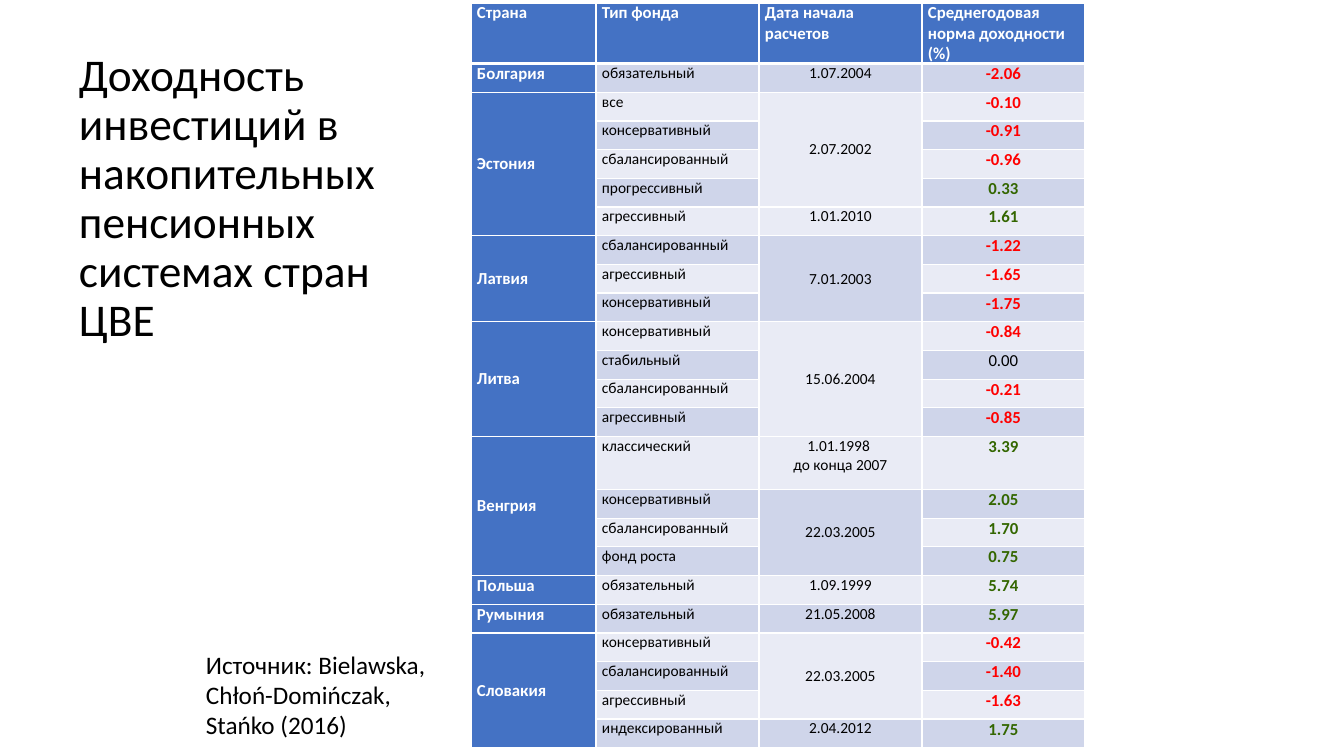
from copy import deepcopy

from lxml.etree import SubElement
from pptx import Presentation
from pptx.dml.color import RGBColor
from pptx.enum.text import MSO_ANCHOR as Anchor, MSO_AUTO_SIZE as AutoSize, PP_ALIGN as Align
from pptx.oxml.ns import qn
from pptx.util import Pt

EMU_PER_PX = 914400 / 100.8
FONT = "Calibri"
WHITE, BLACK, BLUE = "FFFFFF", "000000", "4472C4"
RED, GREEN = "FF0000", "336600"
BANDS = ("E9EBF5", "CFD5EA")
COLUMNS = (125, 163, 163, 163)
HEADER_HEIGHT, TALL_HEIGHT, BODY_HEIGHT = 57, 53, 632
COUNTRY, FUND, DATE, RATE = range(4)

HEADERS = ("Страна", "Тип фонда", "Дата начала расчетов", "Среднегодовая норма доходности (%)")
FUNDS = (
    ("Болгария", "обязательный", "1.07.2004", "-2.06"),
    ("Эстония", "все", "2.07.2002", "-0.10"),
    ("", "консервативный", "", "-0.91"),
    ("", "сбалансированный", "", "-0.96"),
    ("", "прогрессивный", "", "0.33"),
    ("", "агрессивный", "1.01.2010", "1.61"),
    ("Латвия", "сбалансированный", "7.01.2003", "-1.22"),
    ("", "агрессивный", "", "-1.65"),
    ("", "консервативный", "", "-1.75"),
    ("Литва", "консервативный", "15.06.2004", "-0.84"),
    ("", "стабильный", "", "0.00"),
    ("", "сбалансированный", "", "-0.21"),
    ("", "агрессивный", "", "-0.85"),
    ("Венгрия", "классический", "1.01.1998 \vдо конца 2007", "3.39"),
    ("", "консервативный", "22.03.2005", "2.05"),
    ("", "сбалансированный", "", "1.70"),
    ("", "фонд роста", "", "0.75"),
    ("Польша", "обязательный", "1.09.1999", "5.74"),
    ("Румыния", "обязательный", "21.05.2008", "5.97"),
    ("Словакия", "консервативный", "22.03.2005", "-0.42"),
    ("", "сбалансированный", "", "-1.40"),
    ("", "агрессивный", "", "-1.63"),
    ("", "индексированный", "2.04.2012", "1.75"),
)


def px(length):
    """Turn pixels into EMU."""
    return round(length * EMU_PER_PX)


def color(value):
    """Turn a hex string into a colour."""
    return RGBColor.from_string(value)


def assign(target, values):
    """Set each attribute named in a dict."""
    for name, value in values.items():
        setattr(target, name, value)


def write(frame, text, size, ink=BLACK, bold=False, **layout):
    """Fill a text frame with one formatted paragraph."""
    para = frame.paragraphs[0]
    para.text = text
    assign(para, layout)
    for span in para.runs:
        assign(span.font, {"name": FONT, "size": Pt(size), "bold": bold})
        span.font.color.rgb = color(ink)
    for line_break in para._p.findall(qn("a:br")):
        line_break.append(deepcopy(para._p.find(".//" + qn("a:rPr"))))


def add_text(page, bounds, text, size, anchor, fit, **layout):
    """Place a wrapped text box."""
    box = page.shapes.add_textbox(*map(px, bounds))
    write(box.text_frame, text, size, **layout)
    assign(box.text_frame, {"word_wrap": True, "vertical_anchor": anchor, "auto_size": fit})


def add_borders(cell, bottom):
    """Draw white lines around a cell."""
    properties = cell._tc.get_or_add_tcPr()
    for side, width in (("L", 1), ("R", 1), ("T", 1), ("B", bottom)):
        line = SubElement(properties, qn(f"a:ln{side}"), w=str(Pt(width)))
        SubElement(SubElement(line, qn("a:solidFill")), qn("a:srgbClr"), val=WHITE)


def cell_format(row, column, text):
    """Choose the text format of a cell by its place and value."""
    if row == 0 or column == COUNTRY:
        return {"size": 12, "ink": WHITE, "bold": True, "alignment": Align.LEFT}
    if column == FUND:
        return {"size": 11, "alignment": Align.LEFT}
    if column == DATE:
        return {"size": 11, "alignment": Align.CENTER}
    rate = float(text)
    ink = RED if rate < 0 else GREEN if rate > 0 else BLACK
    return {"size": 12, "ink": ink, "bold": rate != 0, "alignment": Align.CENTER}


def merge_down(table, rows, column):
    """Join each labelled cell of a column with the blank cells below it."""
    starts = [row for row, values in enumerate(rows) if values[column]]
    for start, following in zip(starts, starts[1:] + [len(rows)]):
        if following - start > 1:
            origin = table.cell(start, column)
            origin.merge(table.cell(following - 1, column))
            origin.vertical_anchor = Anchor.MIDDLE


def add_fund_table(page):
    """Build the table of fund returns by country."""
    rows = (HEADERS,) + FUNDS
    height = HEADER_HEIGHT + TALL_HEIGHT + BODY_HEIGHT
    bounds = map(px, (471, 3, sum(COLUMNS), height))
    table = page.shapes.add_table(len(rows), len(COLUMNS), *bounds).table
    for column, width in zip(table.columns, COLUMNS):
        column.width = px(width)
    for row, values in enumerate(rows):
        tall = "\v" in values[DATE]
        table.rows[row].height = (
            px(HEADER_HEIGHT) if row == 0
            else px(TALL_HEIGHT) if tall
            else px(BODY_HEIGHT) // (len(FUNDS) - 1)
        )
        for column, text in enumerate(values):
            cell = table.cell(row, column)
            assign(cell, {"margin_left": px(6), "margin_right": px(6),
                          "margin_top": 0, "margin_bottom": 0})
            add_borders(cell, 3 if row == 0 else 1)
            cell.fill.solid()
            solid = row == 0 or column == COUNTRY
            cell.fill.fore_color.rgb = color(BLUE if solid else BANDS[row % 2])
            write(cell.text_frame, text, **cell_format(row, column, text))
    for column in (COUNTRY, DATE):
        merge_down(table, rows, column)


def main():
    """Build and save the slide."""
    deck = Presentation()
    assign(deck, {"slide_width": px(1344), "slide_height": px(756)})
    page = deck.slides.add_slide(deck.slide_layouts[6])
    add_text(page, (69, 126, 360, 146),
             "Доходность инвестиций в накопительных пенсионных системах стран ЦВЕ",
             32.4, Anchor.MIDDLE, AutoSize.NONE, line_spacing=0.9)
    add_text(page, (196, 644, 244, 102),
             "Источник: Bielawska, Chłoń-Domińczak, Stańko (2016)",
             18, Anchor.TOP, AutoSize.SHAPE_TO_FIT_TEXT)
    add_fund_table(page)
    deck.save("out.pptx")


if __name__ == "__main__":
    main()
